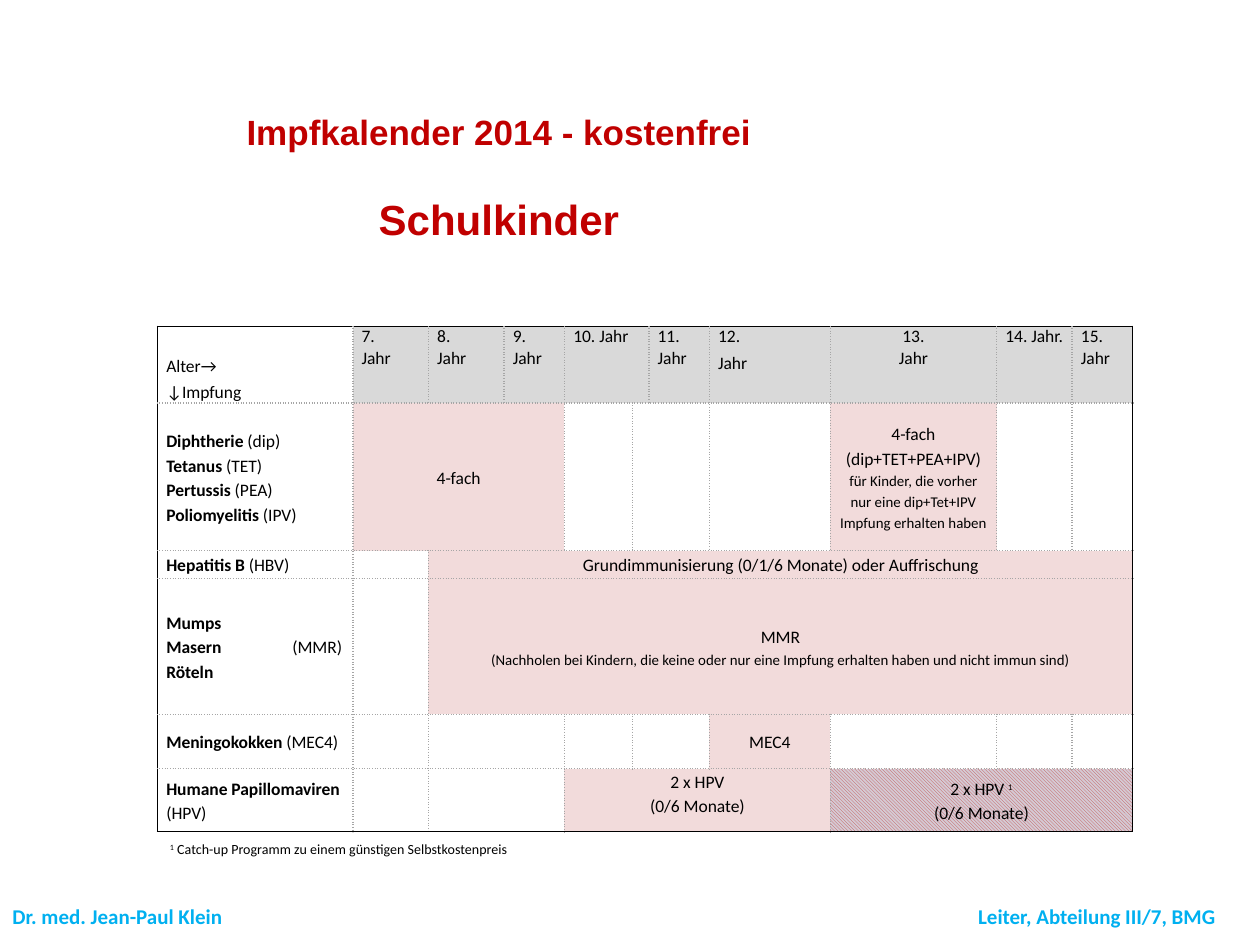
from dataclasses import dataclass

from lxml import etree
from pptx import Presentation
from pptx.dml.color import RGBColor
from pptx.enum.dml import MSO_PATTERN
from pptx.enum.text import MSO_ANCHOR, MSO_AUTO_SIZE, PP_ALIGN
from pptx.oxml.ns import qn
from pptx.util import Inches, Pt

LEFT, CENTER = PP_ALIGN.LEFT, PP_ALIGN.CENTER
TOP, MIDDLE, BOTTOM = MSO_ANCHOR.TOP, MSO_ANCHOR.MIDDLE, MSO_ANCHOR.BOTTOM
NO_AUTOFIT = MSO_AUTO_SIZE.NONE
HATCH = MSO_PATTERN.LIGHT_DOWNWARD_DIAGONAL

COLORS = {
    "title": "C00000", "footer": "00B0F0", "text": "000000", "frame": "000000",
    "grid": "A6A6A6", "header": "D9D9D9", "vaccine": "F2DBDB",
    "hatch": "C0504D", "hatch_back": "D5CAD4",
}
COLUMNS = [1.55, 0.6, 0.6, 0.48, 0.54, 0.13, 0.48, 0.96, 1.32, 0.6, 0.48]
ROWS = [0.61, 1.17, 0.22, 1.08, 0.43, 0.5]
NO_STYLE = "{2D5ABB26-0587-4C30-8999-92F81FD0307C}"


@dataclass
class Piece:
    text: str
    size: float = 10
    bold: bool = False
    raised: bool = False
    color: str = "text"
    font: str = "Calibri"


Lines = list[list[Piece]]


@dataclass
class Entry:
    row: int
    col: int
    lines: Lines
    span: int = 1
    fill: str = ""
    align: PP_ALIGN = CENTER
    anchor: MSO_ANCHOR = MIDDLE
    spacing: float = 1.15
    gap: float = 0


def plain(*texts: str) -> Lines:
    return [[Piece(t)] for t in texts]


def label(name: str, code: str) -> list[Piece]:
    return [Piece(name, bold=True), Piece(code)]


def rgb(name: str) -> RGBColor:
    return RGBColor.from_string(COLORS[name])


def add_tab(p, position: float, align: str) -> None:
    tabs = etree.SubElement(p._p.get_or_add_pPr(), qn("a:tabLst"))
    etree.SubElement(tabs, qn("a:tab"), pos=str(Inches(position)), algn=align)


def write(tf, lines: Lines, align: PP_ALIGN = LEFT, spacing: float = 1,
          gap: float = 0, tab: tuple[float, str] = (1, "l")) -> None:
    tf.word_wrap = True
    for i, pieces in enumerate(lines):
        p = tf.paragraphs[0] if i == 0 else tf.add_paragraph()
        p.alignment = align
        p.line_spacing = spacing
        if i:
            p.space_before = Pt(gap)
        if any("\t" in piece.text for piece in pieces):
            add_tab(p, *tab)
        for piece in pieces:
            r = p.add_run()
            r.text = piece.text
            r.font.name = piece.font
            r.font.size = Pt(piece.size)
            r.font.bold = piece.bold
            r.font.color.rgb = rgb(piece.color)
            if piece.raised:
                r.font._rPr.set("baseline", "30000")


def add_border(cell, side: str, outer: bool) -> None:
    ln = etree.SubElement(cell._tc.get_or_add_tcPr(), qn(f"a:ln{side}"), w=str(Pt(1)))
    fill = etree.SubElement(ln, qn("a:solidFill"))
    etree.SubElement(fill, qn("a:srgbClr"), val=COLORS["frame" if outer else "grid"])
    etree.SubElement(ln, qn("a:prstDash"), val="solid" if outer else "sysDot")


def fill_cell(cell, fill: str) -> None:
    if fill == "hatch":
        cell.fill.patterned()
        cell.fill.pattern = HATCH
        cell.fill.fore_color.rgb = rgb("hatch")
        cell.fill.back_color.rgb = rgb("hatch_back")
    elif fill:
        cell.fill.solid()
        cell.fill.fore_color.rgb = rgb(fill)
    else:
        cell.fill.background()


def draw_entry(table, e: Entry) -> None:
    cell = table.cell(e.row, e.col)
    last = e.col + e.span - 1
    if e.span > 1:
        cell.merge(table.cell(e.row, last))
    cell.vertical_anchor = e.anchor
    edges = {"L": e.col == 0, "R": last == len(COLUMNS) - 1,
             "T": e.row == 0, "B": e.row == len(ROWS) - 1}
    for side, outer in edges.items():
        add_border(cell, side, outer)
    fill_cell(cell, e.fill)
    if e.lines:
        write(cell.text_frame, e.lines, e.align, e.spacing, e.gap)


def add_calendar(s, entries: list[Entry]) -> None:
    frame = s.shapes.add_table(len(ROWS), len(COLUMNS), Inches(1.25), Inches(2.59),
                               Inches(sum(COLUMNS)), Inches(sum(ROWS)))
    table = frame.table
    table.first_row = table.horz_banding = False
    table._tbl.tblPr.find(qn("a:tableStyleId")).text = NO_STYLE
    for column, width in zip(table.columns, COLUMNS):
        column.width = Inches(width)
    for row, height in zip(table.rows, ROWS):
        row.height = Inches(height)
    for cell in table.iter_cells():
        cell.margin_left = cell.margin_right = Inches(0.07)
        cell.margin_top = cell.margin_bottom = 0
        p = cell.text_frame.paragraphs[0]
        etree.SubElement(p._p, qn("a:endParaRPr"), sz="1000")
    for e in entries:
        draw_entry(table, e)


def add_text(s, box: tuple[float, float, float, float], lines: Lines,
             anchor: MSO_ANCHOR = TOP, tab: tuple[float, str] = (1, "l")) -> None:
    tf = s.shapes.add_textbox(*map(Inches, box)).text_frame
    tf.vertical_anchor = anchor
    write(tf, lines, tab=tab)


def add_title(s) -> None:
    title = s.shapes.title
    title.left, title.top, title.width, title.height = map(Inches, (1.42, 0.83, 5.08, 1))
    tf = title.text_frame
    tf.auto_size = NO_AUTOFIT
    tf.vertical_anchor = TOP
    write(tf, [[Piece(text, size, True, color="title", font="Arial")] for text, size in
               (("Impfkalender 2014 - kostenfrei", 20), ("Schulkinder", 24))], CENTER, gap=23)


def header(col: int, *texts: str, span: int = 1, align: PP_ALIGN = LEFT, gap: float = 0) -> Entry:
    return Entry(0, col, plain(*texts), span, "header", align, TOP, 1, gap)


def row_label(row: int, *lines: list[Piece]) -> Entry:
    return Entry(row, 0, list(lines), align=LEFT)


ENTRIES = [
    Entry(0, 0, plain("Alter→", "↓Impfung"), align=LEFT, anchor=BOTTOM, spacing=1, gap=3),
    header(1, "7.", "Jahr"), header(2, "8.", "Jahr"), header(3, "9.", "Jahr"),
    header(4, "10. Jahr", span=2), header(6, "11. Jahr"), header(7, "12.", "Jahr", gap=3),
    header(8, "13.", "Jahr", align=CENTER), header(9, "14. Jahr."), header(10, "15. Jahr"),
    row_label(1, label("Diphtherie", " (dip)"), label("Tetanus ", "(TET)"),
              label("Pertussis ", "(PEA)"), label("Poliomyelitis ", "(IPV)")),
    Entry(1, 1, plain("4-fach"), 3, "vaccine"),
    Entry(1, 8, [[Piece("4-fach (dip+TET+PEA+IPV)")],
                 [Piece("für Kinder, die vorher nur eine dip+Tet+IPV Impfung erhalten haben", 8.5)]],
          fill="vaccine"),
    row_label(2, label("Hepatitis B", " (HBV)")),
    Entry(2, 2, plain("Grundimmunisierung (0/1/6 Monate) oder Auffrischung"), 9, "vaccine"),
    row_label(3, [Piece("Mumps", bold=True)], label("Masern\t", "(MMR)"),
              [Piece("Röteln", bold=True)]),
    Entry(3, 2, [[Piece("MMR")], [Piece("(Nachholen bei Kindern, die keine oder nur eine Impfung "
                                        "erhalten haben und nicht immun sind)", 8.5)]], 9, "vaccine"),
    row_label(4, label("Meningokokken ", "(MEC4)")),
    Entry(4, 7, plain("MEC4"), fill="vaccine"),
    row_label(5, label("Humane Papillomaviren ", "(HPV)")),
    Entry(5, 4, plain("2 x HPV", "(0/6 Monate)"), 4, "vaccine", anchor=TOP),
    Entry(5, 8, [[Piece("2 x HPV "), Piece("1", 8.5, raised=True)], [Piece("(0/6 Monate)")]],
          3, "hatch"),
]
BLANKS = {1: [(4, 1), (5, 2), (7, 1), (9, 1), (10, 1)], 2: [(1, 1)], 3: [(1, 1)],
          4: [(1, 1), (2, 2), (4, 1), (5, 2), (8, 1), (9, 1), (10, 1)], 5: [(1, 1), (2, 2)]}


def main() -> None:
    prs = Presentation()
    prs.slide_width, prs.slide_height = Inches(10), Inches(7.5)
    s = prs.slides.add_slide(prs.slide_layouts[5])
    add_title(s)
    blanks = [Entry(row, col, [], span) for row, cells in BLANKS.items() for col, span in cells]
    add_calendar(s, ENTRIES + blanks)
    add_text(s, (1.25, 6.62, 8.58, 0.24),
             [[Piece("1", 8, raised=True),
               Piece(" Catch-up Programm zu einem günstigen Selbstkostenpreis", 8)]], MIDDLE)
    add_text(s, (0, 7.12, 10, 0.36),
             [[Piece("Dr. med. Jean-Paul Klein\tLeiter, Abteilung III/7, BMG", 12, True,
                     color="footer")]], tab=(9.55, "r"))
    prs.save("out.pptx")


if __name__ == "__main__":
    main()
